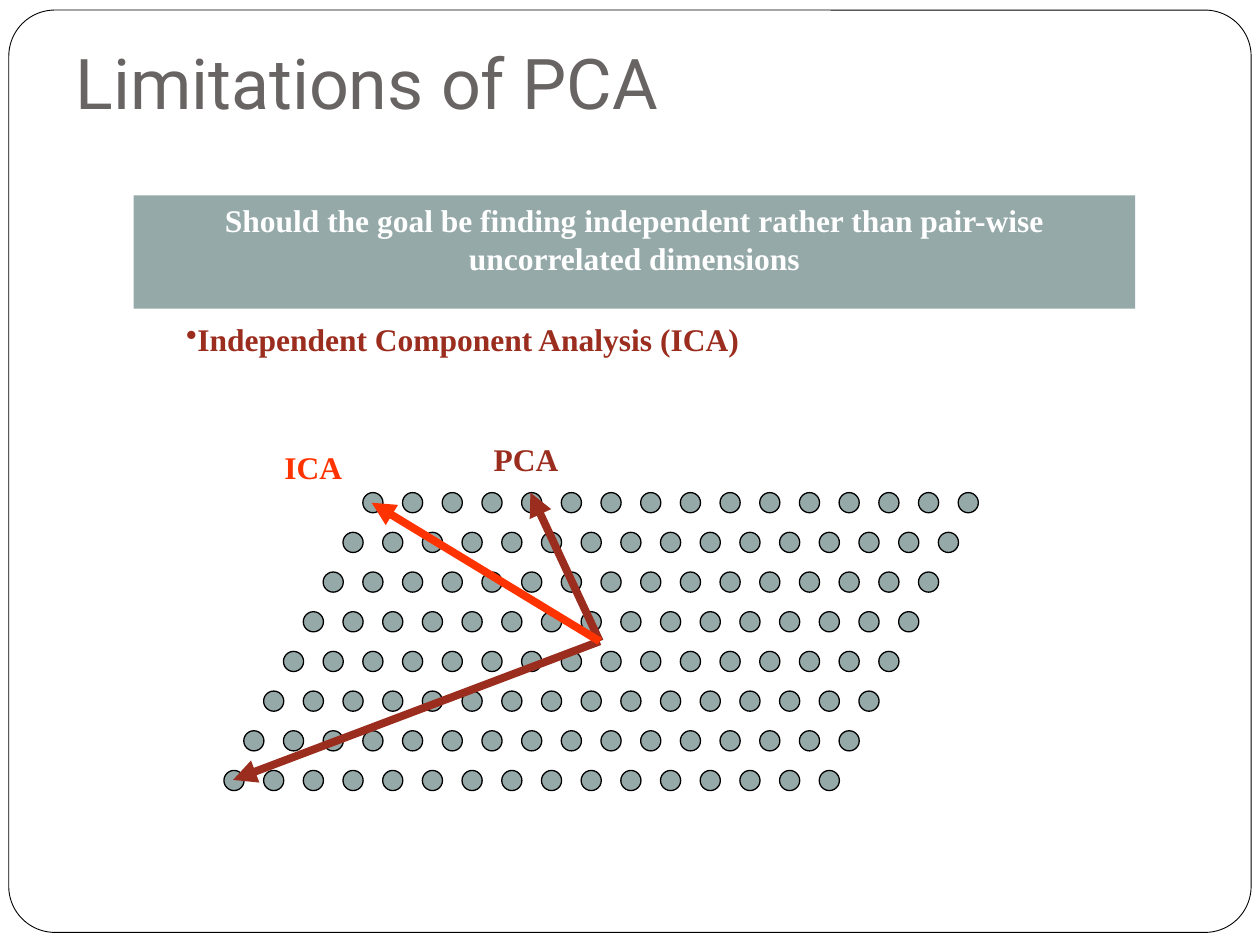
from lxml.etree import SubElement
from pptx import Presentation
from pptx.dml.color import RGBColor
from pptx.enum.shapes import MSO_CONNECTOR as Link, MSO_SHAPE as Shape
from pptx.enum.text import MSO_ANCHOR as Anchor, PP_ALIGN as Align
from pptx.oxml.ns import qn
from pptx.util import Inches, Pt

WHITE = RGBColor(0xFF, 0xFF, 0xFF)
BLACK = RGBColor(0, 0, 0)
GREY = RGBColor(0x69, 0x64, 0x64)
SAGE = RGBColor(0x96, 0xA9, 0xA9)
RUST = RGBColor(0x9B, 0x2D, 0x1F)
ORANGE = RGBColor(0xFF, 0x33, 0x00)
SERIF = "Times New Roman"

TITLE = "Limitations of PCA"
GOAL = ("Should the goal be finding independent rather than pair-wise "
        "uncorrelated dimensions")
# text, colour, box
NOTES = [
    ("Independent Component Analysis (ICA)", RUST, (1.38, 2.49, 7.24, 0.5)),
    ("ICA", ORANGE, (2.16, 3.51, 0.87, 0.5)),
    ("PCA", RUST, (3.82, 3.44, 1.02, 0.5)),
]
# Slanted grid of dots: each row starts half a step left of the one above
ROWS, COLS = 8, 16
STEP, DOT = 0.63 / 2, 0.16
LEFT, TOP = 2.88, 3.91
# Axes run from one origin to a tip
ORIGIN = (4.76, 5.09)
AXES = [((1.85, 6.19), RUST), ((4.21, 3.91), RUST), ((2.95, 3.99), ORANGE)]

deck = Presentation()
deck.slide_width, deck.slide_height = Inches(10), Inches(7.5)
slide = deck.slides.add_slide(deck.slide_layouts[6])
shapes = slide.shapes


def add_form(kind, box, fill, line=None, width=0.75):
    form = shapes.add_shape(kind, *map(Inches, box))
    form.shadow.inherit = False
    form.fill.solid()
    form.fill.fore_color.rgb = fill
    if line is None:
        form.line.fill.background()
    else:
        form.line.color.rgb = line
        form.line.width = Pt(width)
    return form


def write(form, text, color, font=SERIF, size=18, bold=True, align=Align.LEFT):
    frame = form.text_frame
    frame.word_wrap = True
    frame.vertical_anchor = Anchor.TOP
    para = frame.paragraphs[0]
    para.text = text
    para.alignment = align
    para.font.name, para.font.size, para.font.bold = font, Pt(size), bold
    para.font.color.rgb = color
    return frame


def add_text(box, *args, **style):
    return write(shapes.add_textbox(*map(Inches, box)), *args, **style)


def add_arrow(start, end, color):
    arrow = shapes.add_connector(Link.STRAIGHT, *map(Inches, start + end))
    arrow.line.color.rgb = color
    arrow.line.width = Pt(4.5)
    SubElement(arrow.line._get_or_add_ln(), qn("a:tailEnd"), type="triangle")
    SubElement(arrow._element.spPr, qn("a:effectLst"))


border = add_form(Shape.ROUNDED_RECTANGLE, (0.07, 0.08, 9.86, 7.32),
                  WHITE, BLACK, 0.5)
border.adjustments[0] = 0.05

head = add_text((0.5, 0.13, 9, 0.95), TITLE, GREY,
                font="Roboto", size=40, bold=False)
head.vertical_anchor = Anchor.BOTTOM
head.margin_bottom = Inches(0.1)

banner = add_form(Shape.RECTANGLE, (1.06, 1.55, 7.95, 0.9), SAGE)
write(banner, GOAL, WHITE, align=Align.CENTER)

for row in range(ROWS):
    for col in range(COLS):
        x = LEFT + (col - row / 2) * STEP
        y = TOP + row * STEP
        add_form(Shape.OVAL, (x, y, DOT, DOT), SAGE, BLACK)

for tip, color in AXES:
    add_arrow(ORIGIN, tip, color)

frames = [add_text(box, text, color) for text, color, box in NOTES]
props = frames[0].paragraphs[0]._p.get_or_add_pPr()
SubElement(props, qn("a:buChar"), char="•")

deck.save("out.pptx")
